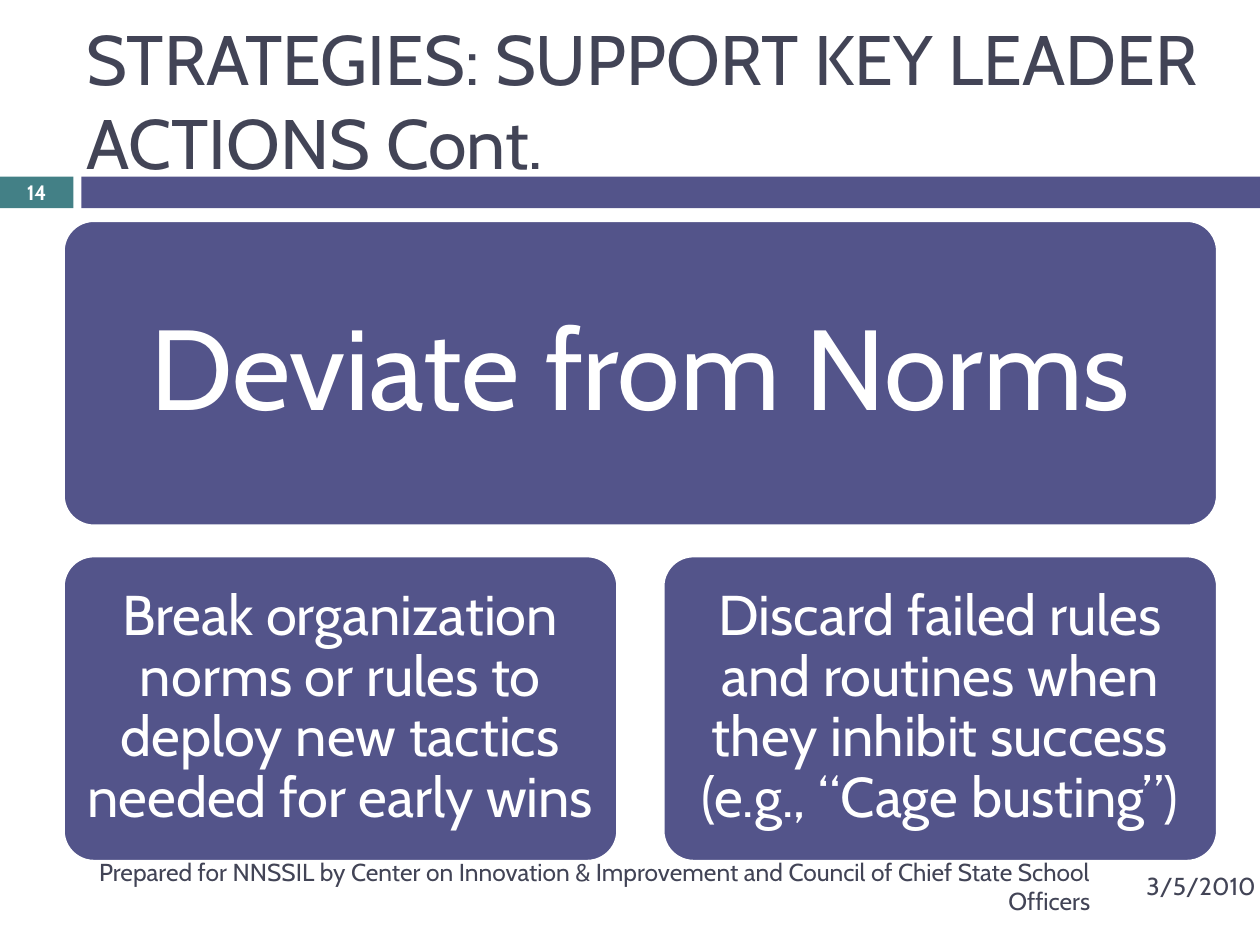
from pptx import Presentation
from pptx.dml.color import RGBColor
from pptx.enum.shapes import MSO_SHAPE as Shape
from pptx.enum.text import MSO_ANCHOR as Anchor, PP_ALIGN as Align
from pptx.util import Cm, Pt

COLORS = {"purple": "53548A", "teal": "438086", "ink": "424456", "white": "FFFFFF"}
FONT = "Cabin"

TITLE = "STRATEGIES: SUPPORT KEY LEADER ACTIONS Cont."
HEADLINE = "Deviate from Norms"
TACTICS = [
    "Break organization norms or rules to deploy new tactics needed for early wins",
    "Discard failed rules and routines when they inhibit success (e.g., “Cage busting”)",
]
PAGE_NUMBER = "14"
DATE = "3/5/2010"
FOOTER = ("Prepared for NNSSIL by Center on Innovation & Improvement "
          "and Council of Chief State School Officers")

# Lengths in centimetres
PAGE_WIDTH, PAGE_HEIGHT = 25.4, 19.05
BAND_TOP, BAND_HEIGHT = 3.56, 0.64
TAB_WIDTH, BAND_LEFT = 1.48, 1.64
CARD_LEFT, CARD_TOP = 1.28, 4.45
CARD_AREA_WIDTH, CARD_HEIGHT = 23.26, 6.15
COLUMN_GAP, ROW_GAP = 0.92, 0.61
# Rounded corners already push the text in by a further 0.18
HEADLINE_INSET, TACTIC_INSET = 0.5, 0.14
FOOTER_TOP, FOOTER_HEIGHT = 17.35, 1.02


def color(name):
    return RGBColor.from_string(COLORS[name])


def write(box, text, size, ink="ink", align=Align.LEFT, bold=False, inset=None, spacing=None):
    frame = box.text_frame
    frame.word_wrap = True
    frame.vertical_anchor = Anchor.MIDDLE
    if inset is not None:
        for side in ("left", "top", "right", "bottom"):
            setattr(frame, f"margin_{side}", Cm(inset))
    para = frame.paragraphs[0]
    para.alignment = align
    para.line_spacing = spacing
    span = para.add_run()
    span.text = text
    for name, value in {"name": FONT, "size": Pt(size), "bold": bold}.items():
        setattr(span.font, name, value)
    span.font.color.rgb = color(ink)


def add_block(slide, kind, area, fill):
    block = slide.shapes.add_shape(kind, *map(Cm, area))
    block.shadow.inherit = False
    block.fill.solid()
    block.fill.fore_color.rgb = color(fill)
    block.line.fill.background()
    return block


def add_card(slide, area, text, size, inset):
    card = add_block(slide, Shape.ROUNDED_RECTANGLE, area, "purple")
    card.adjustments[0] = 0.1
    card.line.color.rgb = color("white")
    card.line.width = Pt(1.5)
    write(card, text, size, "white", Align.CENTER, inset=inset, spacing=0.9)


def add_label(slide, area, text, size, **style):
    write(slide.shapes.add_textbox(*map(Cm, area)), text, size, **style)


def main():
    deck = Presentation()
    deck.slide_width, deck.slide_height = Cm(PAGE_WIDTH), Cm(PAGE_HEIGHT)
    slide = deck.slides.add_slide(deck.slide_layouts[5])

    title = slide.shapes.title
    title.left, title.top, title.width, title.height = map(Cm, (TAB_WIDTH, 0, 23.92, 4.01))
    write(title, TITLE, 40)

    tab_area = (0, BAND_TOP, TAB_WIDTH, BAND_HEIGHT)
    band_area = (BAND_LEFT, BAND_TOP, PAGE_WIDTH - BAND_LEFT, BAND_HEIGHT)
    tab = add_block(slide, Shape.RECTANGLE, tab_area, "teal")
    write(tab, PAGE_NUMBER, 11.9, "white", Align.CENTER, bold=True, inset=0)
    add_block(slide, Shape.RECTANGLE, band_area, "purple")

    headline_area = (CARD_LEFT, CARD_TOP, CARD_AREA_WIDTH, CARD_HEIGHT)
    add_card(slide, headline_area, HEADLINE, 65, HEADLINE_INSET)
    card_width = (CARD_AREA_WIDTH - COLUMN_GAP * (len(TACTICS) - 1)) / len(TACTICS)
    tactic_top = CARD_TOP + CARD_HEIGHT + ROW_GAP
    for column, tactic in enumerate(TACTICS):
        left = CARD_LEFT + column * (card_width + COLUMN_GAP)
        add_card(slide, (left, tactic_top, card_width, CARD_HEIGHT), tactic, 32, TACTIC_INSET)

    add_label(slide, (22.86, FOOTER_TOP, 2.74, FOOTER_HEIGHT), DATE, 14)
    add_label(slide, (0.84, FOOTER_TOP, 21.39, FOOTER_HEIGHT), FOOTER, 14, align=Align.RIGHT)

    deck.save("out.pptx")


if __name__ == "__main__":
    main()
